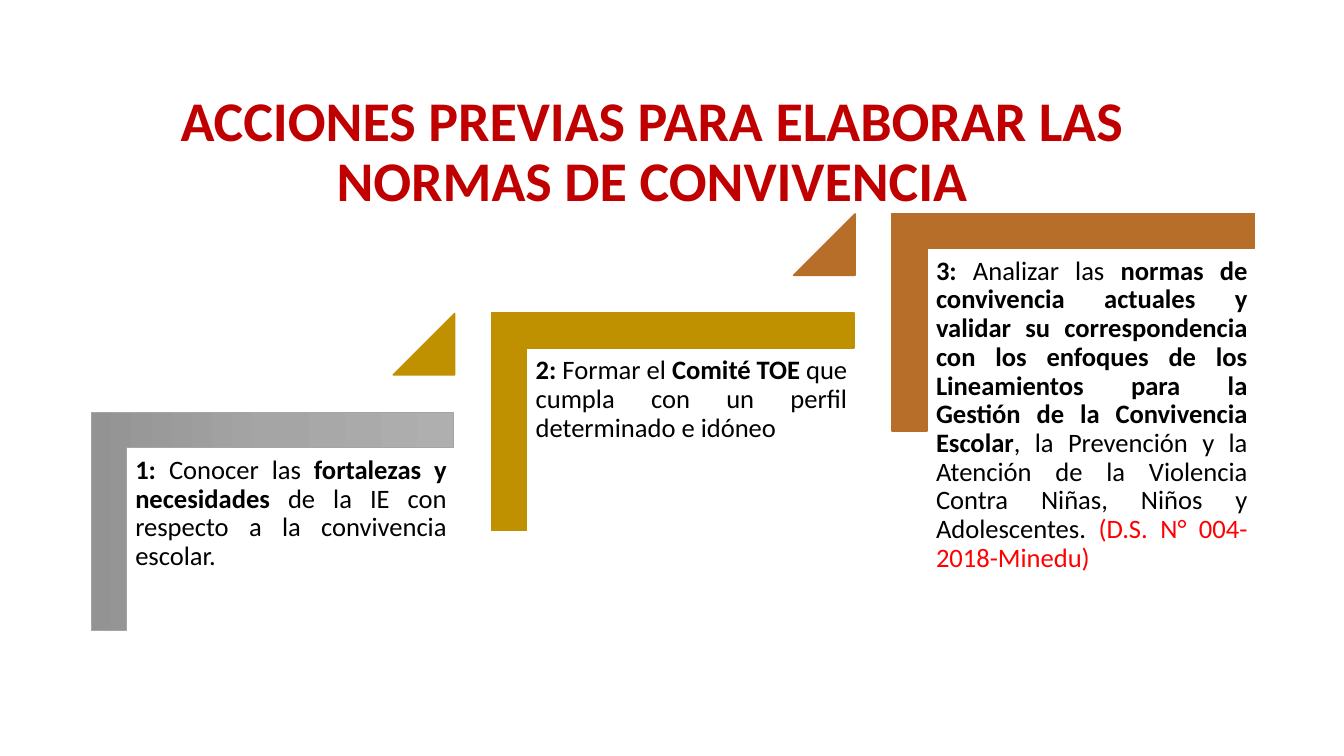
import copy
from dataclasses import dataclass

import pptx
import pptx.dml.color
import pptx.enum.shapes
import pptx.enum.text
import pptx.util
import pptx.oxml.ns

Cm = pptx.util.Cm
Pt = pptx.util.Pt
SHAPES = pptx.enum.shapes.MSO_SHAPE
ALIGN = pptx.enum.text.PP_ALIGN
ANCHOR = pptx.enum.text.MSO_ANCHOR


@dataclass(frozen=True)
class Theme:
    font: str = "Calibri"
    title_size: float = 40
    body_size: float = 19
    title: str = "C00000"
    text: str = "000000"
    citation: str = "FF0000"
    gray: str = "A5A5A5"
    gray_stops: tuple = ("AFAFAF", "A5A5A5", "939393")
    gold: str = "BF9000"
    copper: str = "B76E28"


def rgb(value):
    return pptx.dml.color.RGBColor.from_string(value)


def add_span(para, text, *, font, size, color, bold=False):
    span = para.add_run()
    span.text = text
    span.font.name = font
    span.font.size = Pt(size)
    span.font.bold = bold
    span.font.color.rgb = rgb(color)


class StepSlide:
    def __init__(self, deck, theme):
        self.theme = theme
        self.page = deck.slides.add_slide(deck.slide_layouts[6])

    def text(self, left, top, width, height, spans, *, size, align,
             inset, anchor=ANCHOR.TOP):
        """Add a box with one paragraph; spans are (text, bold, color)."""
        box = self.page.shapes.add_textbox(Cm(left), Cm(top), Cm(width), Cm(height))
        frame = box.text_frame
        frame.word_wrap = True
        frame.vertical_anchor = anchor
        frame.margin_left = frame.margin_right = Cm(inset)
        frame.margin_top = frame.margin_bottom = Cm(inset)
        para = frame.paragraphs[0]
        para.alignment = align
        para.line_spacing = 0.9
        for text, bold, color in spans:
            add_span(para, text, font=self.theme.font, size=size,
                     color=color, bold=bold)

    def shape(self, kind, left, top, width, height, color, line_width, adjustments):
        shape = self.page.shapes.add_shape(kind, Cm(left), Cm(top), Cm(width), Cm(height))
        shape.shadow.inherit = False
        shape.fill.solid()
        shape.fill.fore_color.rgb = rgb(color)
        shape.line.color.rgb = rgb(color)
        shape.line.width = Pt(line_width)
        for index, value in enumerate(adjustments):
            shape.adjustments[index] = value
        return shape

    def bracket(self, left, top, color, stops=None):
        bracket = self.shape(SHAPES.CORNER, left, top, 5.49, 9.14, color,
                             0.5 if stops else 1, (0.161, 0.161))
        bracket.rotation = 90
        if stops:
            self.gradient(bracket, stops)

    def gradient(self, shape, stops):
        shape.fill.gradient()
        shape.fill.gradient_angle = 270
        stop_list = shape._element.spPr.find(".//" + pptx.oxml.ns.qn("a:gsLst"))
        stop_list.insert(1, copy.deepcopy(stop_list[0]))
        for index, (stop, color) in enumerate(zip(shape.fill.gradient_stops, stops)):
            stop.position = index / (len(stops) - 1)
            stop.color.rgb = rgb(color)

    def triangle(self, left, top, color):
        self.shape(SHAPES.ISOSCELES_TRIANGLE, left, top, 1.55, 1.55, color, 1, (1,))


def main():
    theme = Theme()
    deck = pptx.Presentation()
    deck.slide_width, deck.slide_height = Cm(33.87), Cm(19.05)
    slide = StepSlide(deck, theme)

    # Title
    slide.text(3.63, 2.16, 25.6, 3.4,
               [("ACCIONES PREVIAS PARA ELABORAR LAS NORMAS DE CONVIVENCIA",
                 True, theme.title)],
               size=theme.title_size, align=ALIGN.CENTER, inset=0.2,
               anchor=ANCHOR.MIDDLE)

    # Content of the three rising steps
    black = theme.text
    steps = [
        (theme.gray, theme.gray_stops, [
            ("1: ", True, black),
            ("Conocer las ", False, black),
            ("fortalezas y necesidades", True, black),
            (" de la IE con respecto a la convivencia escolar.", False, black)]),
        (theme.gold, None, [
            ("2: ", True, black),
            ("Formar el ", False, black),
            ("Comité TOE ", True, black),
            ("que cumpla con un perfil determinado e idóneo", False, black)]),
        (theme.copper, None, [
            ("3: ", True, black),
            ("Analizar las ", False, black),
            ("normas de convivencia actuales y validar su correspondencia "
             "con los enfoques de los Lineamientos para la Gestión de la "
             "Convivencia Escolar", True, black),
            (", la Prevención y la Atención de la Violencia Contra Niñas, "
             "Niños y Adolescentes. ", False, black),
            ("(D.S. N° 004-2018-Minedu)", False, theme.citation)]),
    ]

    # Each step moves right and up; a triangle leads to the next one
    step_right, step_up = 10.09, 2.51
    for index, (color, stops, spans) in enumerate(steps):
        right, up = index * step_right, index * step_up
        if index:
            slide.triangle(right - 0.18, 10.41 - up, color)
        slide.bracket(4.12 + right, 8.57 - up, color, stops)
        slide.text(3.21 + right, 11.3 - up, 8.25, 7.24, spans,
                   size=theme.body_size, align=ALIGN.JUSTIFY, inset=0.2)

    deck.save("out.pptx")


if __name__ == "__main__":
    main()
